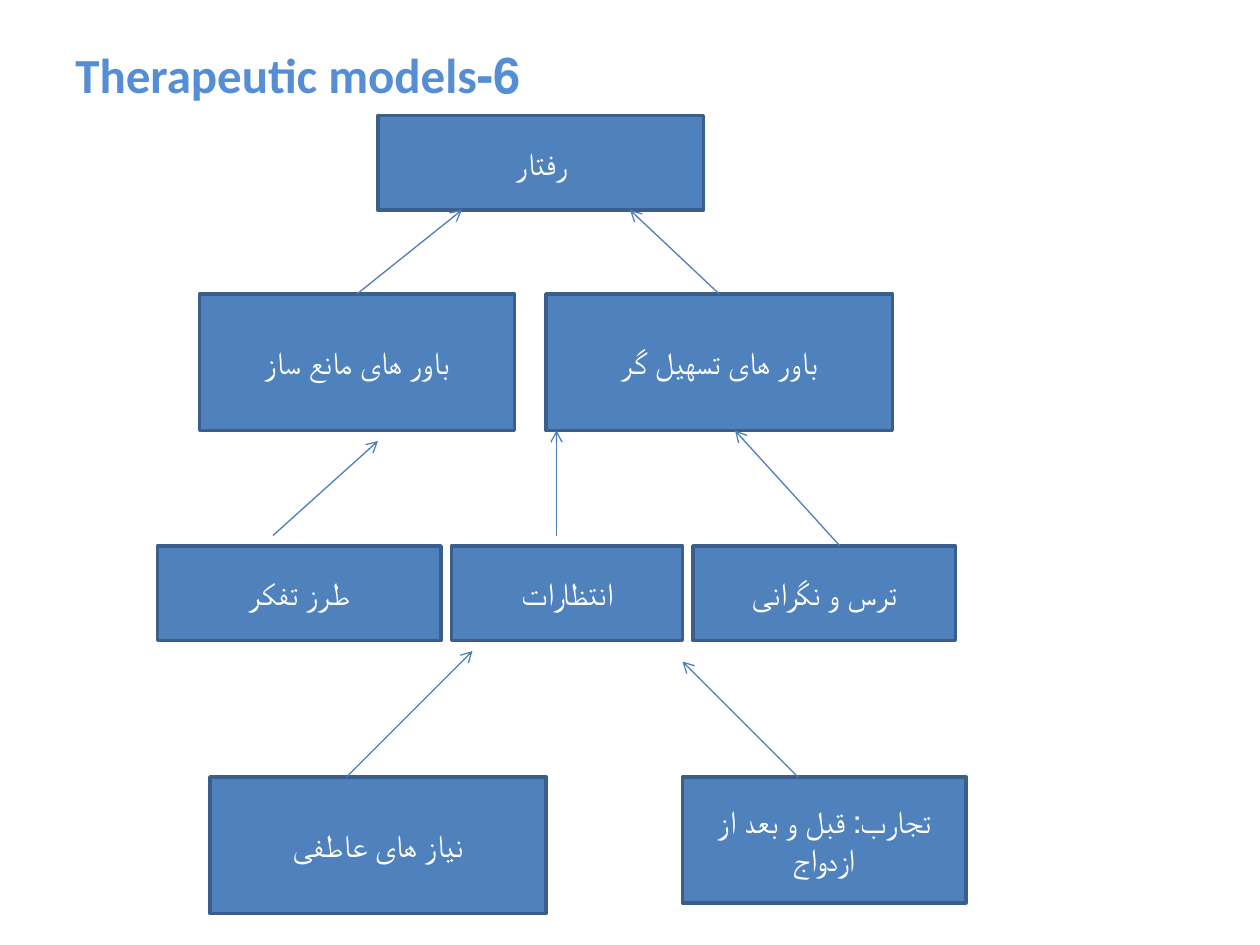
from lxml import etree
from pptx import Presentation
from pptx.dml.color import RGBColor
from pptx.enum.shapes import MSO_CONNECTOR, MSO_SHAPE
from pptx.enum.text import MSO_ANCHOR, PP_ALIGN
from pptx.oxml.ns import qn
from pptx.util import Pt

RECTANGLE = MSO_SHAPE.RECTANGLE
STRAIGHT = MSO_CONNECTOR.STRAIGHT
MIDDLE = MSO_ANCHOR.MIDDLE
LEFT, CENTER = PP_ALIGN.LEFT, PP_ALIGN.CENTER


def rgb(value):
    return RGBColor.from_string(value)


class Diagram:
    FONT = "Calibri"
    FILL, BORDER, ARROW = "4F81BD", "3A5F8C", "4B7EBC"
    TITLE, LABEL = "558ED5", "FFFFFF"

    def __init__(self, slide):
        self.slide = slide

    def add_wording(self, shape, wording, size, color, align, bold=False):
        frame = shape.text_frame
        frame.word_wrap = True
        frame.vertical_anchor = MIDDLE
        paragraph = frame.paragraphs[0]
        paragraph.alignment = align
        run = paragraph.add_run()
        run.text = wording
        run.font.name = self.FONT
        run.font.size = Pt(size)
        run.font.bold = bold
        run.font.color.rgb = rgb(color)
        return paragraph

    def title(self, wording, left, top, width, height):
        heading = self.slide.shapes.add_textbox(
            Pt(left), Pt(top), Pt(width), Pt(height))
        paragraph = self.add_wording(
            heading, wording, 28, self.TITLE, LEFT, bold=True)
        paragraph._p.get_or_add_pPr().set("rtl", "1")

    def box(self, wording, left, top, width, height):
        factor = self.slide.shapes.add_shape(
            RECTANGLE, Pt(left), Pt(top), Pt(width), Pt(height))
        factor.shadow.inherit = False
        factor.fill.solid()
        factor.fill.fore_color.rgb = rgb(self.FILL)
        factor.line.color.rgb = rgb(self.BORDER)
        factor.line.width = Pt(2)
        self.add_wording(factor, wording, 18, self.LABEL, CENTER)

    def arrow(self, start, end):
        link = self.slide.shapes.add_connector(
            STRAIGHT, *(Pt(value) for value in start + end))
        link.line.color.rgb = rgb(self.ARROW)
        link.line.width = Pt(0.75)
        outline = link._element.spPr.find(qn("a:ln"))
        etree.SubElement(outline, qn("a:tailEnd"), type="arrow")
        etree.SubElement(link._element.spPr, qn("a:effectLst"))


# Levels from behaviour down to its roots: top, then (wording, left, width, height)
LEVELS = [
    (66, [("رفتار", 216, 186, 54)]),
    (168, [("باور های مانع ساز", 114, 180, 78),
           ("باور های تسهیل گر", 312, 198, 78)]),
    (312, [("طرز تفکر", 90, 162, 54),
           ("انتظارات", 258, 132, 54),
           ("ترس و نگرانی", 396, 150, 54)]),
    (444, [("نیاز های عاطفی", 120, 192, 78),
           ("تجارب: قبل و بعد از ازدواج", 390, 162, 72)]),
]

# Upward influences: start point, end point
INFLUENCES = [
    ((204, 168), (264, 120)),
    ((411, 168), (360, 120)),
    ((156, 306), (216, 252)),
    ((318, 306), (318, 246)),
    ((480, 312), (420, 246)),
    ((198, 444), (270, 372)),
    ((456, 444), (390, 378)),
]


def main():
    deck = Presentation()
    deck.slide_width, deck.slide_height = Pt(720), Pt(540)
    diagram = Diagram(deck.slides.add_slide(deck.slide_layouts[6]))

    # Heading
    diagram.title("6-Therapeutic models", 36, 0, 648, 84)

    # Boxes
    for top, factors in LEVELS:
        for wording, left, width, height in factors:
            diagram.box(wording, left, top, width, height)

    # Arrows
    for start, end in INFLUENCES:
        diagram.arrow(start, end)

    deck.save("out.pptx")


if __name__ == "__main__":
    main()
